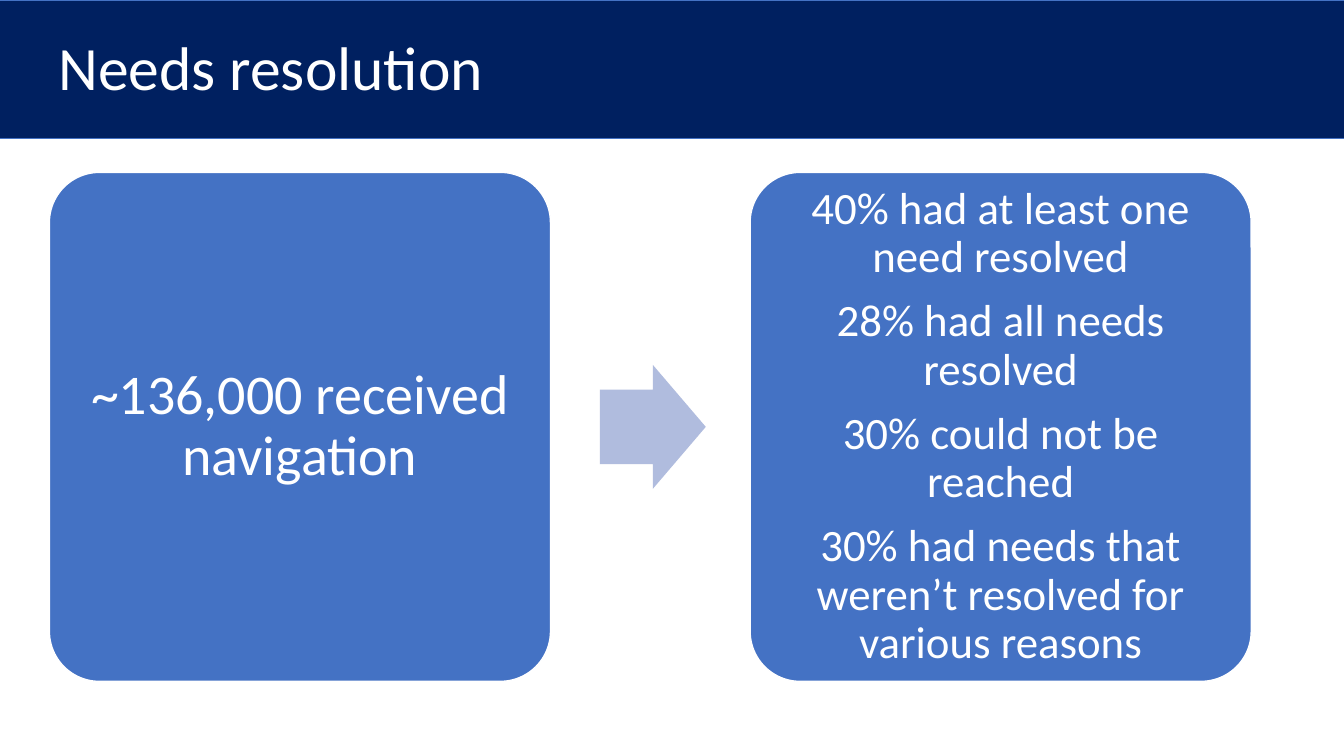
from dataclasses import dataclass

from pptx import Presentation
from pptx.dml.color import RGBColor
from pptx.enum.shapes import MSO_SHAPE
from pptx.enum.text import MSO_ANCHOR, PP_ALIGN
from pptx.util import Inches, Pt


@dataclass(frozen=True)
class Theme:
    font: str = "Calibri"
    navy: str = "002060"
    blue: str = "4472C4"
    pale: str = "B0BCDE"
    white: str = "FFFFFF"
    title_size: int = 44
    lead_size: int = 40
    result_size: int = 32
    line_spacing: float = 0.9
    gap_share: float = 0.35


THEME = Theme()
WIDTH, HEIGHT = 13.33, 7.5

# Flow grid: two equal cards, the second one pitch to the right
CARD_LEFT, CARD_TOP = 0.49, 1.71
CARD_WIDTH, CARD_HEIGHT = 4.97, 5.05
CARD_PITCH = 6.95
ARROW_LEFT, ARROW_WIDTH, ARROW_HEIGHT = 5.95, 1.05, 1.23


def add_block(page, kind, area, fill, line=None, line_width=1.0, adjustments=()):
    """Add a flat preset shape; area is left, top, width, height in inches."""
    block = page.shapes.add_shape(kind, *map(Inches, area))
    block.shadow.inherit = False
    block.fill.solid()
    block.fill.fore_color.rgb = RGBColor.from_string(fill)
    if line:
        block.line.color.rgb = RGBColor.from_string(line)
        block.line.width = Pt(line_width)
    else:
        block.line.fill.background()
    for index, value in enumerate(adjustments):
        block.adjustments[index] = value
    return block


def write(box, lines, size, align, margins, gap=0):
    """Fill a shape or text box with evenly spaced paragraphs."""
    frame = box.text_frame
    frame.word_wrap = True
    frame.vertical_anchor = MSO_ANCHOR.MIDDLE
    frame.margin_left = frame.margin_right = Inches(margins[0])
    frame.margin_top = frame.margin_bottom = Inches(margins[1])
    for index, line in enumerate(lines):
        para = frame.paragraphs[0] if index == 0 else frame.add_paragraph()
        para.text = line
        para.alignment = align
        para.line_spacing = THEME.line_spacing
        para.space_before = Pt(0)
        para.space_after = Pt(gap)
        para.font.name = THEME.font
        para.font.size = Pt(size)
        para.font.color.rgb = RGBColor.from_string(THEME.white)


def add_title(page, title):
    add_block(page, MSO_SHAPE.RECTANGLE, (-0.01, 0, WIDTH + 0.03, 1.37),
              THEME.navy, THEME.blue, 0.5)
    box = page.shapes.add_textbox(*map(Inches, (0.48, 0.23, 11.5, 0.94)))
    write(box, [title], THEME.title_size, PP_ALIGN.LEFT, (0.1, 0.05))


def add_card(page, column, lines, size, margin):
    area = (CARD_LEFT + column * CARD_PITCH, CARD_TOP, CARD_WIDTH, CARD_HEIGHT)
    card = add_block(page, MSO_SHAPE.ROUNDED_RECTANGLE, area, THEME.blue,
                     THEME.white, adjustments=(0.1,))
    write(card, lines, size, PP_ALIGN.CENTER, (margin, margin),
          size * THEME.gap_share)


def add_arrow(page):
    top = CARD_TOP + (CARD_HEIGHT - ARROW_HEIGHT) / 2
    add_block(page, MSO_SHAPE.RIGHT_ARROW,
              (ARROW_LEFT, top, ARROW_WIDTH, ARROW_HEIGHT),
              THEME.pale, adjustments=(0.6, 0.5))


def main():
    deck = Presentation()
    deck.slide_width, deck.slide_height = Inches(WIDTH), Inches(HEIGHT)
    page = deck.slides.add_slide(deck.slide_layouts[6])

    # Heading band
    add_title(page, "Needs resolution")

    # Flow from people navigated to their outcomes
    add_card(page, 0, ["~136,000 received navigation"], THEME.lead_size, 0.17)
    add_arrow(page)
    add_card(page, 1, [
        "40% had at least one need resolved",
        "28% had all needs resolved",
        "30% could not be reached",
        "30% had needs that weren’t resolved for various reasons",
    ], THEME.result_size, 0.13)

    deck.save("out.pptx")


if __name__ == "__main__":
    main()
